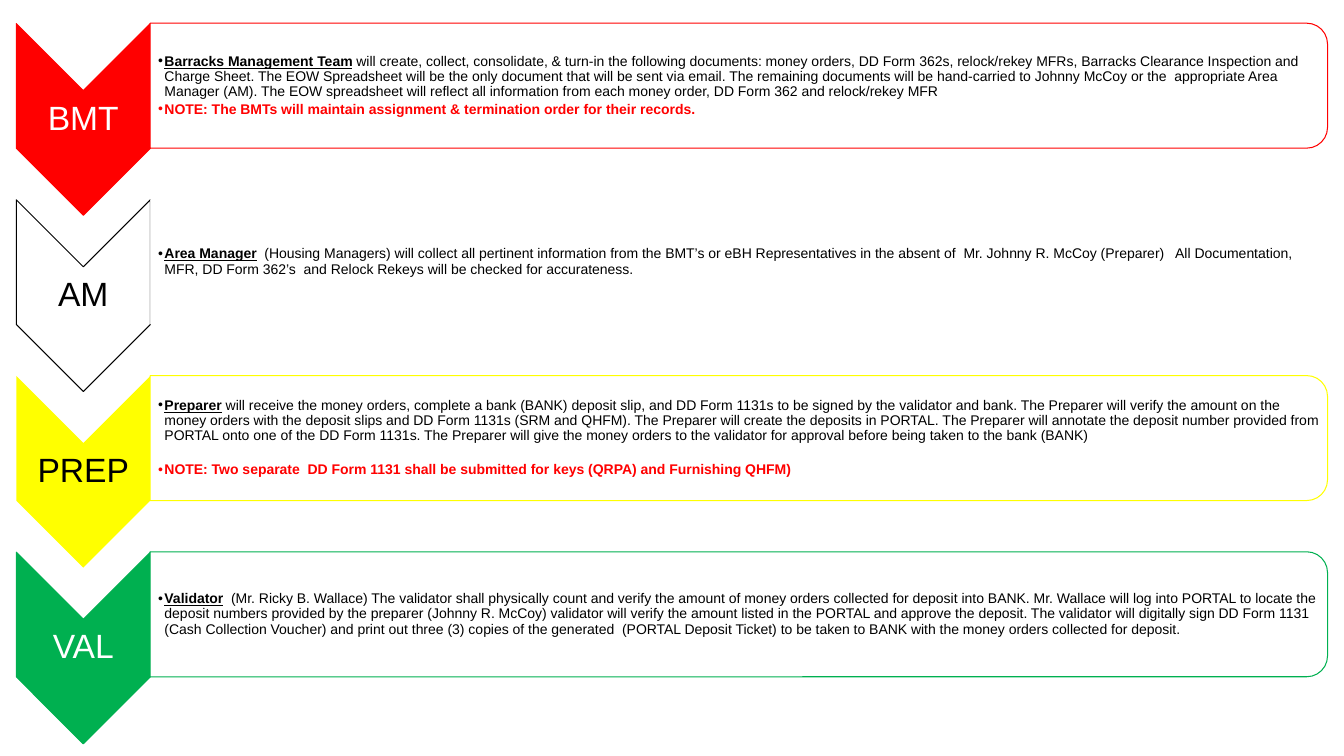
from lxml.etree import SubElement
from pptx import Presentation
from pptx.dml.color import RGBColor
from pptx.enum.shapes import MSO_SHAPE
from pptx.enum.text import MSO_ANCHOR, MSO_AUTO_SIZE, PP_ALIGN
from pptx.oxml.ns import qn
from pptx.util import Cm, Pt

COLORS = {
    "red": "FF0000",
    "yellow": "FFFF00",
    "green": "00B050",
    "white": "FFFFFF",
    "black": "000000",
}
FONT = "Arial"
ROW_PITCH = 4.44
PANEL_CENTER = (18.62, 2.16)
LIST_CENTER = (18.54, 2.16)
CHEVRON_CENTER = (2.1, 3.01)

# label, label colour, chevron fill, chevron line, panel line, role, duties, note
STEPS = [
    ("BMT", "white", "red", "red", "red", "Barracks Management Team",
     " will create, collect, consolidate, & turn-in the following documents: money orders, "
     "DD Form 362s, relock/rekey MFRs, Barracks Clearance Inspection and Charge Sheet. "
     "The EOW Spreadsheet will be the only document that will be sent via email. "
     "The remaining documents will be hand-carried to Johnny McCoy or the  appropriate Area "
     "Manager (AM). The EOW spreadsheet will reflect all information from each money order, "
     "DD Form 362 and relock/rekey MFR",
     "NOTE: The BMTs will maintain assignment & termination order for their records."),
    ("AM", "black", "white", "black", None, "Area Manager",
     "  (Housing Managers) will collect all pertinent information from the BMT’s or eBH "
     "Representatives in the absent of  Mr. Johnny R. McCoy (Preparer)   All Documentation, "
     "MFR, DD Form 362’s  and Relock Rekeys will be checked for accurateness.",
     None),
    ("PREP", "black", "yellow", None, "yellow", "Preparer",
     " will receive the money orders, complete a bank (BANK) deposit slip, and DD Form 1131s "
     "to be signed by the validator and bank. The Preparer will verify the amount on the money "
     "orders with the deposit slips and DD Form 1131s (SRM and QHFM). The Preparer will create "
     "the deposits in PORTAL. The Preparer will annotate the deposit number provided from "
     "PORTAL onto one of the DD Form 1131s. The Preparer will give the money orders to the "
     "validator for approval before being taken to the bank (BANK)",
     "NOTE: Two separate  DD Form 1131 shall be submitted for keys (QRPA) and Furnishing QHFM)"),
    ("VAL", "white", "green", "green", "green", "Validator",
     "  (Mr. Ricky B. Wallace) The validator shall physically count and verify the amount of "
     "money orders collected for deposit into BANK. Mr. Wallace will log into PORTAL to locate "
     "the deposit numbers provided by the preparer (Johnny R. McCoy) validator will verify the "
     "amount listed in the PORTAL and approve the deposit. The validator will digitally sign "
     "DD Form 1131 (Cash Collection Voucher) and print out three (3) copies of the generated  "
     "(PORTAL Deposit Ticket) to be taken to BANK with the money orders collected for deposit.",
     None),
]
NOTE_GAPS = {"PREP": 12}


def centered(center, width, height, row):
    """Return left, top, width and height of a box centred in the given row."""
    x, y = center
    return (Cm(x - width / 2), Cm(y + row * ROW_PITCH - height / 2),
            Cm(width), Cm(height))


class ProcessSlide:
    """Draws the rows of the process on one slide in a shared style."""

    def __init__(self, slide):
        self.slide = slide
        self.shapes = slide.shapes

    def color(self, name):
        return RGBColor.from_string(COLORS[name])

    def turned_shape(self, kind, box, fill, line, opacity=100):
        shape = self.shapes.add_shape(kind, *box)
        shape.rotation = 90
        shape.shadow.inherit = False
        shape.fill.solid()
        shape.fill.fore_color.rgb = self.color(fill)
        if opacity < 100:
            fill_color = shape.fill._xPr.find(qn("a:solidFill"))[0]
            SubElement(fill_color, qn("a:alpha"), val=str(opacity * 1000))
        if line:
            shape.line.color.rgb = self.color(line)
            shape.line.width = Pt(0.75)
        else:
            shape.line.fill.background()

    def prepare_frame(self, text_frame, left, others):
        text_frame.word_wrap = True
        text_frame.auto_size = MSO_AUTO_SIZE.NONE
        text_frame.vertical_anchor = MSO_ANCHOR.MIDDLE
        text_frame.margin_left = Cm(left)
        text_frame.margin_top = text_frame.margin_right = Cm(others)
        text_frame.margin_bottom = Cm(others)

    def format_run(self, run, size, color, bold=False, underline=False):
        run.font.name = FONT
        run.font.size = Pt(size)
        run.font.color.rgb = self.color(color)
        run.font.bold = bold
        run.font.underline = underline

    def label(self, box, text, color):
        text_frame = self.shapes.add_textbox(*box).text_frame
        self.prepare_frame(text_frame, 0.05, 0.05)
        text_frame.text = text
        paragraph = text_frame.paragraphs[0]
        paragraph.alignment = PP_ALIGN.CENTER
        paragraph.line_spacing = 0.9
        self.format_run(paragraph.runs[0], 24, color)

    def bullet(self, paragraph, space_before=0):
        paragraph.alignment = PP_ALIGN.LEFT
        paragraph.line_spacing = 0.9
        paragraph.space_before = Pt(space_before)
        paragraph.space_after = Pt(1.5)
        properties = paragraph._p.get_or_add_pPr()
        properties.set("marL", str(Cm(0.16)))
        properties.set("indent", str(Cm(-0.16)))
        SubElement(properties, qn("a:buFont"), typeface=FONT)
        SubElement(properties, qn("a:buChar"), char="•")

    def duty_list(self, placeholder, box, role, duties, note, note_gap):
        """Fill a body placeholder and raise it above the panel."""
        self.shapes._spTree.append(placeholder._element)
        placeholder.left, placeholder.top, placeholder.width, placeholder.height = box
        text_frame = placeholder.text_frame
        self.prepare_frame(text_frame, 0.2, 0.03)
        text_frame.text = role
        paragraph = text_frame.paragraphs[0]
        paragraph.add_run().text = duties
        self.bullet(paragraph)
        role_run, duties_run = paragraph.runs
        self.format_run(role_run, 10, "black", bold=True, underline=True)
        self.format_run(duties_run, 10, "black")
        if note:
            paragraph = text_frame.add_paragraph()
            paragraph.text = note
            self.bullet(paragraph, note_gap)
            self.format_run(paragraph.runs[0], 10, "red", bold=True)


def main():
    presentation = Presentation()
    presentation.slide_width = Cm(33.87)
    presentation.slide_height = Cm(19.05)
    comparison_layout = presentation.slide_layouts[4]
    slide = presentation.slides.add_slide(comparison_layout)
    title = slide.shapes.title._element
    title.getparent().remove(title)
    bodies = list(slide.placeholders)
    process = ProcessSlide(slide)

    for row, (step, body) in enumerate(zip(STEPS, bodies)):
        name, name_color, fill, chevron_line, panel_line, role, duties, note = step
        process.turned_shape(MSO_SHAPE.CHEVRON,
                             centered(CHEVRON_CENTER, 4.83, 3.38, row), fill, chevron_line)
        process.label(centered(CHEVRON_CENTER, 3.38, 1.45, row), name, name_color)
        process.turned_shape(MSO_SHAPE.ROUND_2_SAME_RECTANGLE,
                             centered(PANEL_CENTER, 3.15, 29.67, row),
                             "white", panel_line, opacity=90)
        process.duty_list(body, centered(LIST_CENTER, 29.51, 2.84, row),
                          role, duties, note, NOTE_GAPS.get(name, 0))

    presentation.save("out.pptx")


if __name__ == "__main__":
    main()
